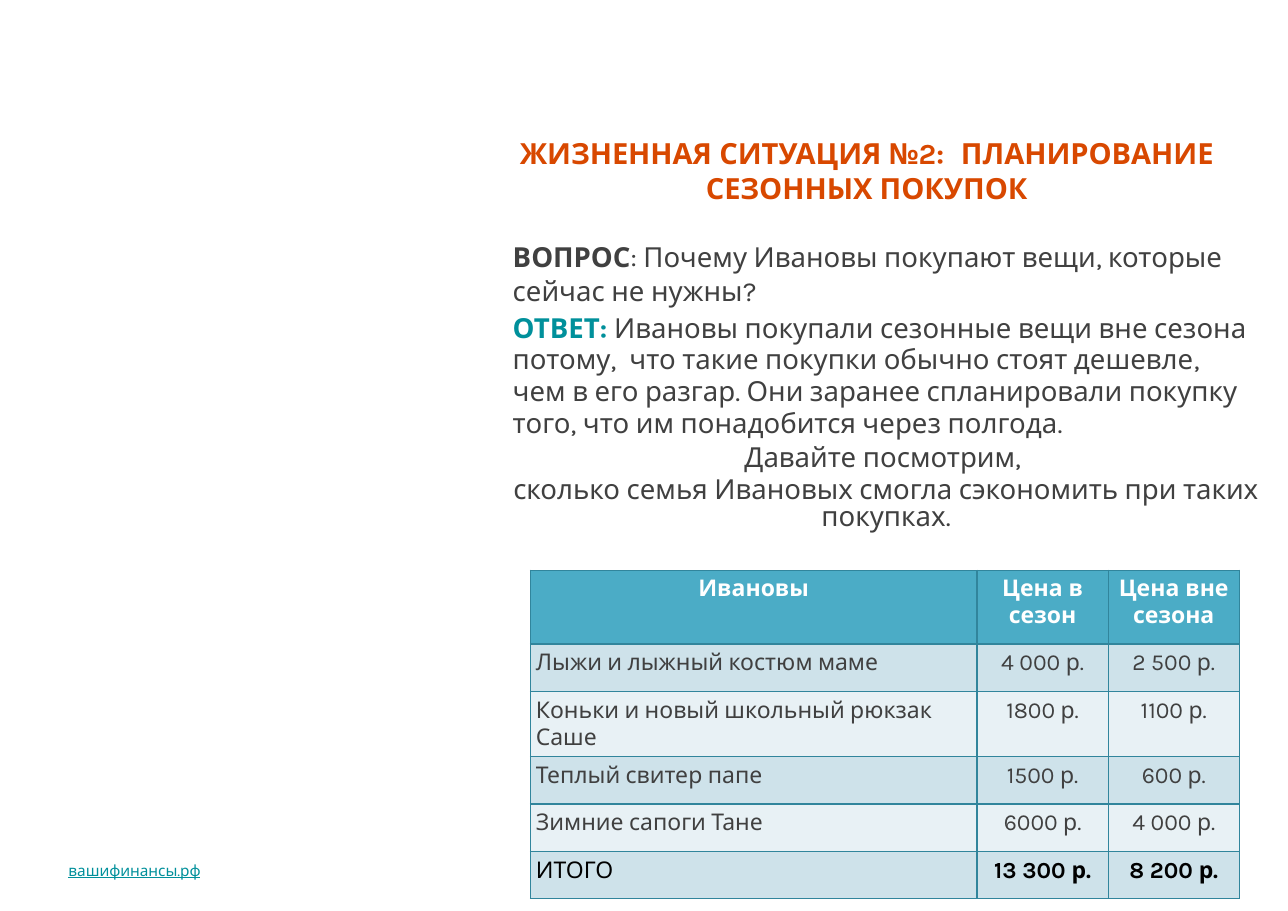
from lxml import etree
from pptx import Presentation
from pptx import util as u
from pptx.dml.color import RGBColor
from pptx.enum import text
from pptx.oxml.ns import qn

LEFT, CENTER = text.PP_ALIGN.LEFT, text.PP_ALIGN.CENTER
TOP, MIDDLE = text.MSO_ANCHOR.TOP, text.MSO_ANCHOR.MIDDLE
TEAL, ORANGE, GREY = "00909B", "D84800", "404040"
BLACK, WHITE, BORDER = "000000", "FFFFFF", "31859C"
HEADER_FILL, BANDS = "4BACC6", ("CEE2EA", "E8F1F5")


def rgb(value):
    return RGBColor.from_string(value)


class SeasonSlide:
    """Holds the shared style and the current slide."""

    font = "Karla"
    inset = u.Inches(0.05)

    def __init__(self, deck):
        self.slide = deck.slides.add_slide(deck.slide_layouts[5])

    def run(self, paragraph, words, size, color, bold=False, underline=False):
        run = paragraph.add_run()
        run.text = words
        run.font.name = self.font
        run.font.size = u.Pt(size)
        run.font.bold = bold
        run.font.underline = underline
        run.font.color.rgb = rgb(color)

    def frame(self, shape, anchor):
        frame = shape.text_frame
        frame.word_wrap = True
        frame.auto_size = text.MSO_AUTO_SIZE.NONE
        frame.vertical_anchor = anchor
        frame.margin_left = frame.margin_right = self.inset
        frame.margin_top = frame.margin_bottom = self.inset
        return frame

    def title(self, words, box):
        heading = self.slide.shapes.title
        heading.left, heading.top, heading.width, heading.height = map(u.Inches, box)
        paragraph = self.frame(heading, TOP).paragraphs[0]
        paragraph.alignment = CENTER
        self.run(paragraph, words, 19, ORANGE, bold=True)

    def paragraphs(self, items, box, size, anchor=TOP):
        frame = self.frame(self.slide.shapes.add_textbox(*map(u.Inches, box)), anchor)
        for index, (align, spacing, runs) in enumerate(items):
            paragraph = frame.add_paragraph() if index else frame.paragraphs[0]
            paragraph.alignment = align
            paragraph.line_spacing = spacing
            paragraph.space_before = u.Pt(4 if index else 0)
            for words, color, *style in runs:
                self.run(paragraph, words, size, color, *style)

    def border(self, cell):
        properties = cell._tc.get_or_add_tcPr()
        for index, side in enumerate(("a:lnL", "a:lnR", "a:lnT", "a:lnB")):
            line = etree.Element(qn(side), w=str(u.Pt(1)))
            fill = etree.SubElement(line, qn("a:solidFill"))
            etree.SubElement(fill, qn("a:srgbClr"), val=BORDER)
            properties.insert(index, line)

    def cell(self, cell, words, align, color, bold, fill):
        cell.margin_left = cell.margin_right = self.inset
        cell.margin_top = cell.margin_bottom = self.inset
        cell.fill.solid()
        cell.fill.fore_color.rgb = rgb(fill)
        self.border(cell)
        paragraph = cell.text_frame.paragraphs[0]
        paragraph.alignment = align
        self.run(paragraph, words, 15, color, bold)

    def table(self, rows, box, widths, heights):
        place = map(u.Inches, box)
        table = self.slide.shapes.add_table(len(rows), len(widths), *place).table
        for column, width in zip(table.columns, widths):
            column.width = u.Inches(width)
        last = len(rows) - 1
        for r, (values, height) in enumerate(zip(rows, heights)):
            table.rows[r].height = u.Inches(height)
            fill = BANDS[(r - 1) % 2] if r else HEADER_FILL
            color = WHITE if r == 0 else BLACK if r == last else GREY
            for c, words in enumerate(values):
                align = LEFT if r and not c else CENTER
                bold = r == 0 or (r == last and c > 0)
                self.cell(table.cell(r, c), words, align, color, bold, fill)


def main():
    deck = Presentation()
    deck.slide_width, deck.slide_height = u.Inches(11.68), u.Inches(8.26)
    page = SeasonSlide(deck)

    page.title("ЖИЗНЕННАЯ СИТУАЦИЯ №2: \tПЛАНИРОВАНИЕ СЕЗОННЫХ ПОКУПОК",
               (4.6, 1.18, 6.52, 1.17))
    page.paragraphs([(LEFT, 1, [("вашифинансы.рф", TEAL, False, True)])],
                    (0.57, 7.75, 3.97, 0.28), 10, MIDDLE)

    question = [
        ("ВОПРОС", GREY, True),
        (": Почему Ивановы покупают вещи, которые сейчас не нужны?", GREY),
    ]
    answer = [
        ("ОТВЕТ: ", TEAL, True),
        ("Ивановы покупали сезонные вещи вне сезона потому,  что такие покупки "
         "обычно стоят дешевле, чем в его разгар. Они заранее спланировали "
         "покупку того, что им понадобится через полгода.", GREY),
    ]
    invitation = [("Давайте посмотрим, ", GREY)]
    savings = [("сколько семья Ивановых смогла сэкономить при таких покупках.", GREY)]
    page.paragraphs([(LEFT, 1, question), (LEFT, 0.96, answer),
                     (CENTER, 0.8, invitation), (CENTER, 0.8, savings)],
                    (4.6, 2.13, 6.87, 2.98), 18)

    prices = [
        ("Ивановы", "Цена в сезон", "Цена вне сезона"),
        ("Лыжи и лыжный костюм маме", "4 000 р.", "2 500 р."),
        ("Коньки и новый школьный рюкзак Саше", "1800 р.", "1100 р."),
        ("Теплый свитер папе", "1500 р.", "600 р."),
        ("Зимние сапоги Тане", "6000 р.", "4 000 р."),
        ("ИТОГО", "13 300 р.", "8 200 р."),
    ]
    page.table(prices, (4.81, 5.17, 6.43, 2.82), (4.05, 1.19, 1.19),
               [0.67] + [0.43] * 5)
    deck.save("out.pptx")


if __name__ == "__main__":
    main()
